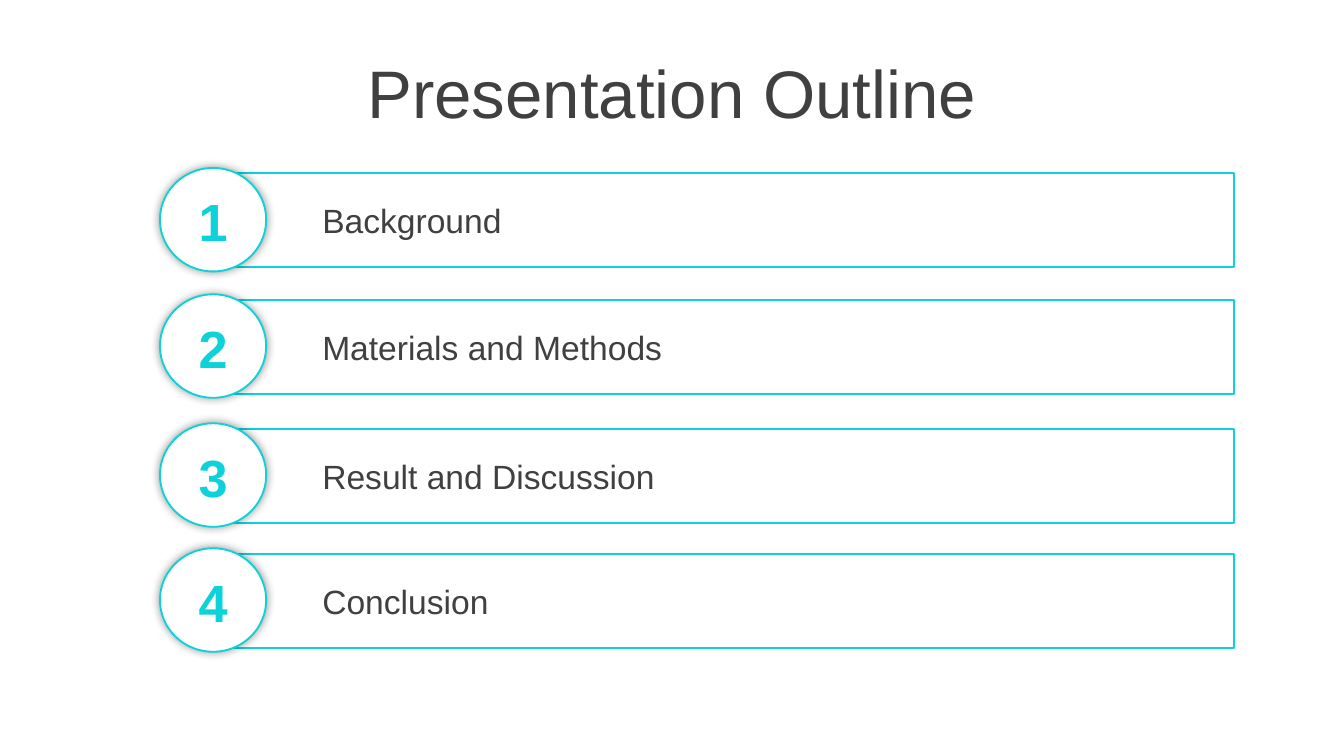
from lxml.etree import SubElement
from pptx import Presentation
from pptx.dml.color import RGBColor
from pptx.enum.shapes import MSO_SHAPE as Shape
from pptx.enum.text import MSO_ANCHOR as Anchor, MSO_AUTO_SIZE as AutoSize, PP_ALIGN as Align
from pptx.oxml.ns import qn
from pptx.util import Inches, Pt

ACCENT, INK, WHITE = "0DD2D9", "404040", "FFFFFF"
WIDTH = 10
SECTIONS = [
    (1.29, "Background"),
    (2.23, "Materials and Methods"),
    (3.19, "Result and Discussion"),
    (4.12, "Conclusion"),
]


def color(value):
    """Turn a hex string into a colour."""
    return RGBColor.from_string(value)


class OutlinePage:
    """Style and current slide, with one method per kind of element."""

    font = "Arial"

    def __init__(self, deck):
        """Add a blank slide with a white background."""
        self.page = deck.slides.add_slide(deck.slide_layouts[6])
        self.page.background.fill.solid()
        self.page.background.fill.fore_color.rgb = color(WHITE)

    def text(self, parent, bounds, words, size, ink=INK, bold=False, align=Align.LEFT, grow=True):
        """Add a vertically centred line of text."""
        box = parent.add_textbox(*map(Inches, bounds))
        frame = box.text_frame
        frame.text = words
        frame.word_wrap = True
        frame.vertical_anchor = Anchor.MIDDLE
        frame.auto_size = AutoSize.SHAPE_TO_FIT_TEXT if grow else AutoSize.NONE
        para = frame.paragraphs[0]
        para.alignment = align
        font = para.runs[0].font
        font.name, font.size, font.bold = self.font, Pt(size), bold
        font.color.rgb = color(ink)

    def outline(self, parent, kind, bounds, fill=None):
        """Add a shape with an accent outline and an optional fill."""
        shape = parent.add_shape(kind, *map(Inches, bounds))
        shape.shadow.inherit = False
        shape.line.color.rgb = color(ACCENT)
        shape.line.width = Pt(1)
        if fill:
            shape.fill.solid()
            shape.fill.fore_color.rgb = color(fill)
        else:
            shape.fill.background()
        return shape

    def glow_shadow(self, shape):
        """Give a shape a soft shadow on all sides."""
        effects = shape.element.spPr.find(qn("a:effectLst"))
        shadow = SubElement(effects, qn("a:outerShdw"), blurRad=str(Pt(5)), dist="0",
                            dir="0", algn="ctr", rotWithShape="0")
        black = SubElement(shadow, qn("a:srgbClr"), val="000000")
        SubElement(black, qn("a:alpha"), val="40000")

    def section(self, number, top, words):
        """Add a grouped bar with its label and numbered disc."""
        parts = self.page.shapes.add_group_shape().shapes
        self.outline(parts, Shape.RECTANGLE, (1.59, top, 7.59, 0.7))
        self.text(parts, (2.3, top + 0.15, 6.63, 0.4), words, 18)
        disc = self.outline(parts, Shape.OVAL, (1.19, top - 0.04, 0.79, 0.77), WHITE)
        self.glow_shadow(disc)
        self.text(parts, (1.34, top + 0.07, 0.49, 0.57), str(number), 28, ACCENT, True, Align.CENTER)


def main():
    """Build and save the outline slide."""
    deck = Presentation()
    deck.slide_width, deck.slide_height = Inches(WIDTH), Inches(WIDTH * 9 / 16)
    outline = OutlinePage(deck)
    outline.text(outline.page.shapes, (0, 0.37, WIDTH, 0.63), "Presentation Outline", 36,
                 align=Align.CENTER, grow=False)
    for number, (top, words) in enumerate(SECTIONS, 1):
        outline.section(number, top, words)
    deck.save("out.pptx")


if __name__ == "__main__":
    main()
